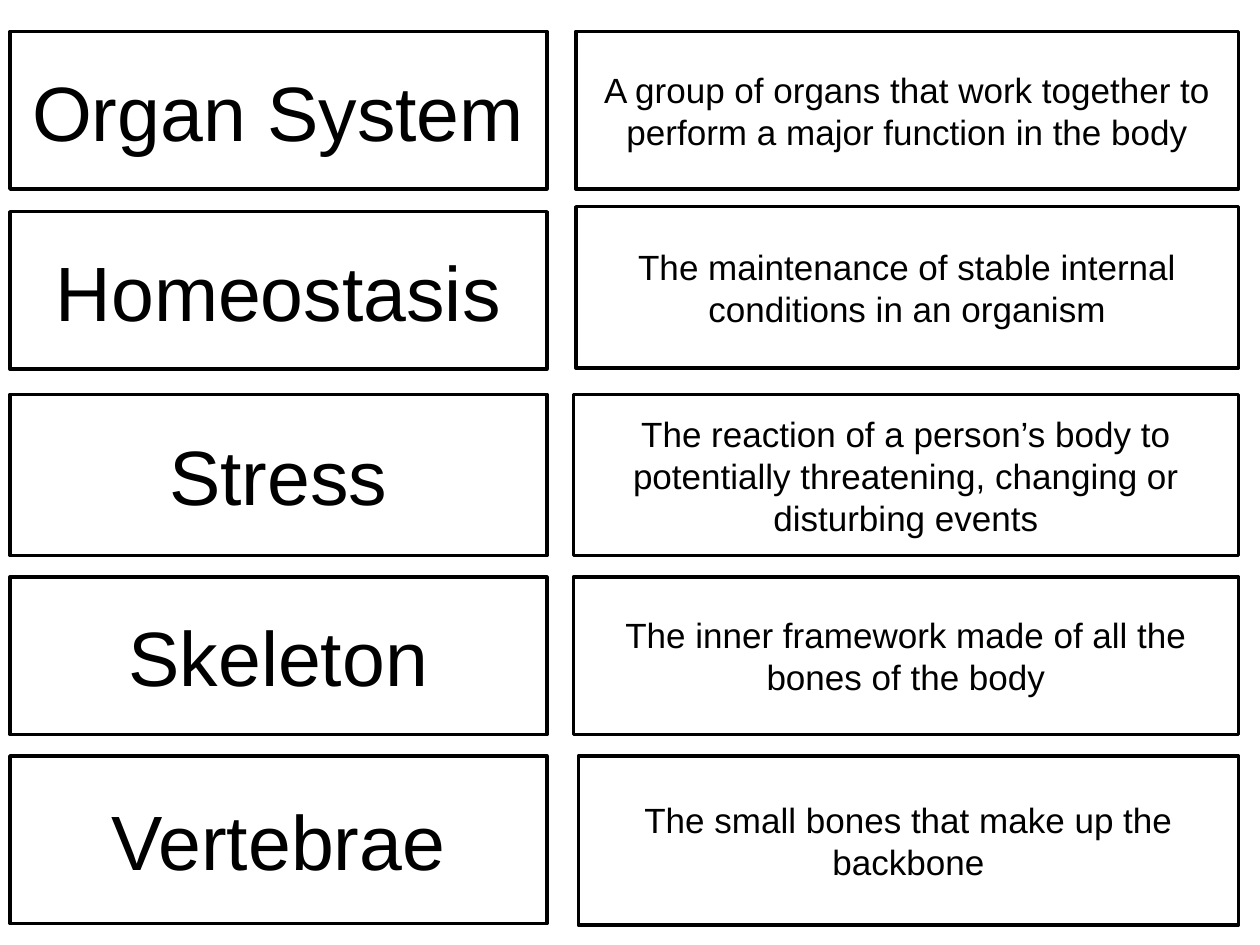
from pptx import Presentation
from pptx import util as u
from pptx.dml.color import RGBColor
from pptx.enum import shapes, text

FONT = "Arial"
BLACK = "000000"
WHITE = "FFFFFF"
TERM_LEFT, TERM_WIDTH, TERM_SIZE = 0.08, 4.26, 44
DEFINITION_RIGHT, DEFINITION_SIZE = 9.83, 20

# Each card pair: term, (top, height), definition, (left, top, height)
CARD_PAIRS = [
    ("Organ System", (0.25, 1.25),
     "A group of organs that work together to perform a major function in the body",
     (4.57, 0.25, 1.25)),
    ("Homeostasis", (1.68, 1.25),
     "The maintenance of stable internal conditions in an organism",
     (4.57, 1.64, 1.28)),
    ("Stress", (3.13, 1.28),
     "The reaction of a person’s body to potentially threatening, changing or disturbing events",
     (4.55, 3.13, 1.28)),
    ("Skeleton", (4.58, 1.25),
     "The inner framework made of all the bones of the body",
     (4.55, 4.58, 1.25)),
    ("Vertebrae", (6, 1.33),
     "The small bones that make up the backbone",
     (4.59, 6, 1.34)),
]


def set_color(color_format, hex_color):
    """Apply a hex colour to a colour format."""
    color_format.rgb = RGBColor.from_string(hex_color)


def add_card(slide, left, top, width, height, wording, size):
    """Add a white outlined card with centred wording."""
    shape = slide.shapes.add_shape(
        shapes.MSO_SHAPE.FLOWCHART_PROCESS,
        u.Inches(left), u.Inches(top), u.Inches(width), u.Inches(height))
    shape.shadow.inherit = False
    shape.fill.solid()
    set_color(shape.fill.fore_color, WHITE)
    set_color(shape.line.color, BLACK)
    shape.line.width = u.Pt(2)
    frame = shape.text_frame
    frame.word_wrap = True
    frame.vertical_anchor = text.MSO_ANCHOR.MIDDLE
    paragraph = frame.paragraphs[0]
    paragraph.alignment = text.PP_ALIGN.CENTER
    run = paragraph.add_run()
    run.text = wording
    run.font.name = FONT
    run.font.size = u.Pt(size)
    set_color(run.font.color, BLACK)


def main():
    """Build the vocabulary slide and save it."""
    presentation = Presentation()
    presentation.slide_width = u.Inches(10)
    presentation.slide_height = u.Inches(7.5)
    slide = presentation.slides.add_slide(presentation.slide_layouts[6])
    for term, (term_top, term_height), definition, (left, top, height) in CARD_PAIRS:
        add_card(slide, TERM_LEFT, term_top, TERM_WIDTH, term_height, term, TERM_SIZE)
        add_card(slide, left, top, DEFINITION_RIGHT - left, height,
                 definition, DEFINITION_SIZE)
    presentation.save("out.pptx")


if __name__ == "__main__":
    main()
